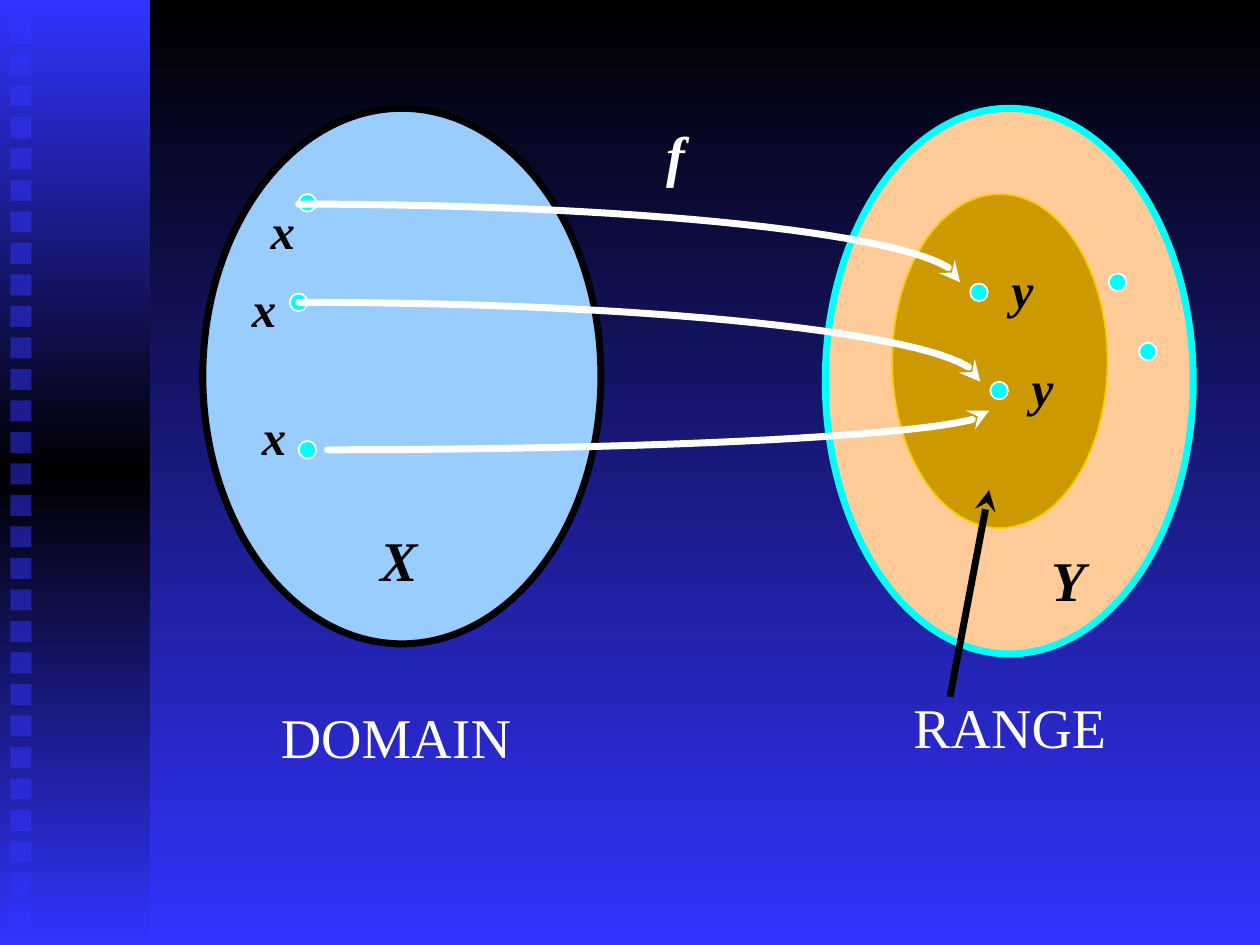
from copy import deepcopy
from dataclasses import dataclass
from math import cos, pi, sin

from lxml.etree import SubElement
from pptx import Presentation
from pptx.dml.color import RGBColor
from pptx.enum.shapes import MSO_CONNECTOR as Connector, MSO_SHAPE as Shape
from pptx.oxml.ns import qn
from pptx.util import Inches, Pt

COLORS = {
    "black": "000000",
    "white": "FFFFFF",
    "blue": "3333FF",
    "cyan": "00FFFF",
    "domain": "99CCFF",
    "codomain": "FFCC99",
    "range": "CC9900",
    "gold": "FFCC00",
}
FONT = "Times New Roman"
CELL = Inches(0.1)
DOT = 1.4
CURVE_STEPS = 32


@dataclass
class Box:
    left: float
    top: float
    width: float
    height: float

    def inner(self, x, y, width, height):
        return Box(self.left + x, self.top + y, width, height)

    def emu(self):
        return [round(v * CELL) for v in (self.left, self.top, self.width, self.height)]


def rgb(name):
    return RGBColor.from_string(COLORS[name])


def fill_gradient(fill, names):
    fill.gradient()
    fill.gradient_angle = 270
    first = fill.gradient_stops[0]._gs
    for _ in names[2:]:
        first.addnext(deepcopy(first))
    for index, (stop, name) in enumerate(zip(fill.gradient_stops, names)):
        stop.color.rgb = rgb(name)
        stop.position = index / (len(names) - 1)


def add_filled(slide, kind, box, fill=None, line=None, width=1):
    figure = slide.shapes.add_shape(kind, *box.emu())
    figure.shadow.inherit = False
    if fill:
        figure.fill.solid()
        figure.fill.fore_color.rgb = rgb(fill)
    if line:
        figure.line.color.rgb = rgb(line)
        figure.line.width = Pt(width)
    else:
        figure.line.fill.background()
    return figure


def add_dots(slide, box, places):
    for x, y in places:
        add_filled(slide, Shape.OVAL, box.inner(x, y, DOT, DOT), "cyan", "white")


def add_label(slide, box, text, color="black", size=32, math=True):
    frame = slide.shapes.add_textbox(*box.emu()).text_frame
    frame.word_wrap = True
    paragraph = frame.paragraphs[0]
    paragraph.text = text
    font = paragraph.font
    font.name, font.size = FONT, Pt(size)
    font.bold = font.italic = math
    font.color.rgb = rgb(color)


def style_arrow(arrow, color):
    arrow.line.color.rgb = rgb(color)
    arrow.line.width = Pt(4)
    SubElement(arrow.line._get_or_add_ln(), qn("a:tailEnd"), type="stealth")


def add_curve(slide, start, end):
    (x0, y0), (x1, y1) = start, end
    angles = [step * pi / 2 / CURVE_STEPS for step in range(1, CURVE_STEPS + 1)]
    points = [(x0 + (x1 - x0) * sin(a), y0 + (y1 - y0) * (1 - cos(a))) for a in angles]
    builder = slide.shapes.build_freeform(round(x0 * CELL), round(y0 * CELL))
    builder.add_line_segments(
        [(round(x * CELL), round(y * CELL)) for x, y in points], close=False
    )
    curve = builder.convert_to_shape()
    curve.shadow.inherit = False
    curve.fill.background()
    style_arrow(curve, "white")
    curve.line._get_or_add_ln().set("cap", "rnd")


def draw_side_band(slide, box):
    band = add_filled(slide, Shape.RECTANGLE, box)
    fill_gradient(band.fill, ["blue", "black", "blue"])
    for row in range(29):
        square = add_filled(
            slide, Shape.RECTANGLE, box.inner(0.83, 1.78 + 2.5 * row, 1.67, 1.67), "blue"
        )
        color = square.fill._xPr.find(qn("a:solidFill"))[0]
        SubElement(color, qn("a:alpha"), val="50000")


def draw_domain(slide, box):
    add_filled(slide, Shape.OVAL, box, "domain", "black", 4)
    add_dots(slide, box, [(7.6, 6.8), (6.9, 14.7), (7.6, 26.4)])
    for x, y in [(4.4, 6.8), (2.9, 13), (3.7, 23.2)]:
        add_label(slide, box.inner(x, y, 6.3, 5.7), "x", size=28)
    add_label(slide, box.inner(13.1, 32.6, 8.6, 6.3), "X")
    add_label(slide, box.inner(5.2, 46.7, 36.8, 6.3), "DOMAIN", "white", math=False)


def draw_codomain(slide, box):
    add_filled(slide, Shape.OVAL, box, "codomain", "cyan", 4)
    add_filled(slide, Shape.OVAL, box.inner(5.3, 6.8, 17.1, 26.5), "range", "gold")
    add_dots(slide, box, [(24.9, 18.6), (22.5, 13.1), (13.1, 21.7), (11.5, 13.9)])
    for x, y in [(13.8, 11.5), (15.4, 19.3)]:
        add_label(slide, box.inner(x, y, 9.4, 5.7), "y", size=28)
    add_label(slide, box.inner(17, 34.2, 7, 6.3), "Y")
    add_label(slide, box.inner(6, 45.9, 21.9, 6.3), "RANGE", "white", math=False)

    tail = box.inner(9.9, 46.7, 0, 0).emu()[:2]
    head = box.inner(13, 30.3, 0, 0).emu()[:2]
    pointer = slide.shapes.add_connector(Connector.STRAIGHT, *tail, *head)
    style_arrow(pointer, "black")
    SubElement(pointer._element.spPr, qn("a:effectLst"))


def draw_mapping(slide, box):
    for start, end in [
        ((0, 7.1), (52.5, 13.3)),
        ((0, 14.9), (54.1, 21.2)),
        ((2.3, 26.6), (54.8, 23.5)),
    ]:
        add_curve(
            slide,
            (box.left + start[0], box.top + start[1]),
            (box.left + end[0], box.top + end[1]),
        )
    add_label(slide, box.inner(28.2, 0, 8.6, 6.3), "f", "white")


def main():
    presentation = Presentation()
    presentation.slide_width = 100 * CELL
    presentation.slide_height = 75 * CELL
    slide = presentation.slides.add_slide(presentation.slide_layouts[6])
    fill_gradient(slide.background.fill, ["black", "blue"])
    draw_side_band(slide, Box(0, 0, 11.9, 75))
    draw_domain(slide, Box(16.1, 8.6, 31.6, 42.5))
    draw_codomain(slide, Box(65.5, 8.6, 29.2, 43.3))
    draw_mapping(slide, Box(23.7, 9.1, 54.8, 26.6))
    presentation.save("out.pptx")


if __name__ == "__main__":
    main()
